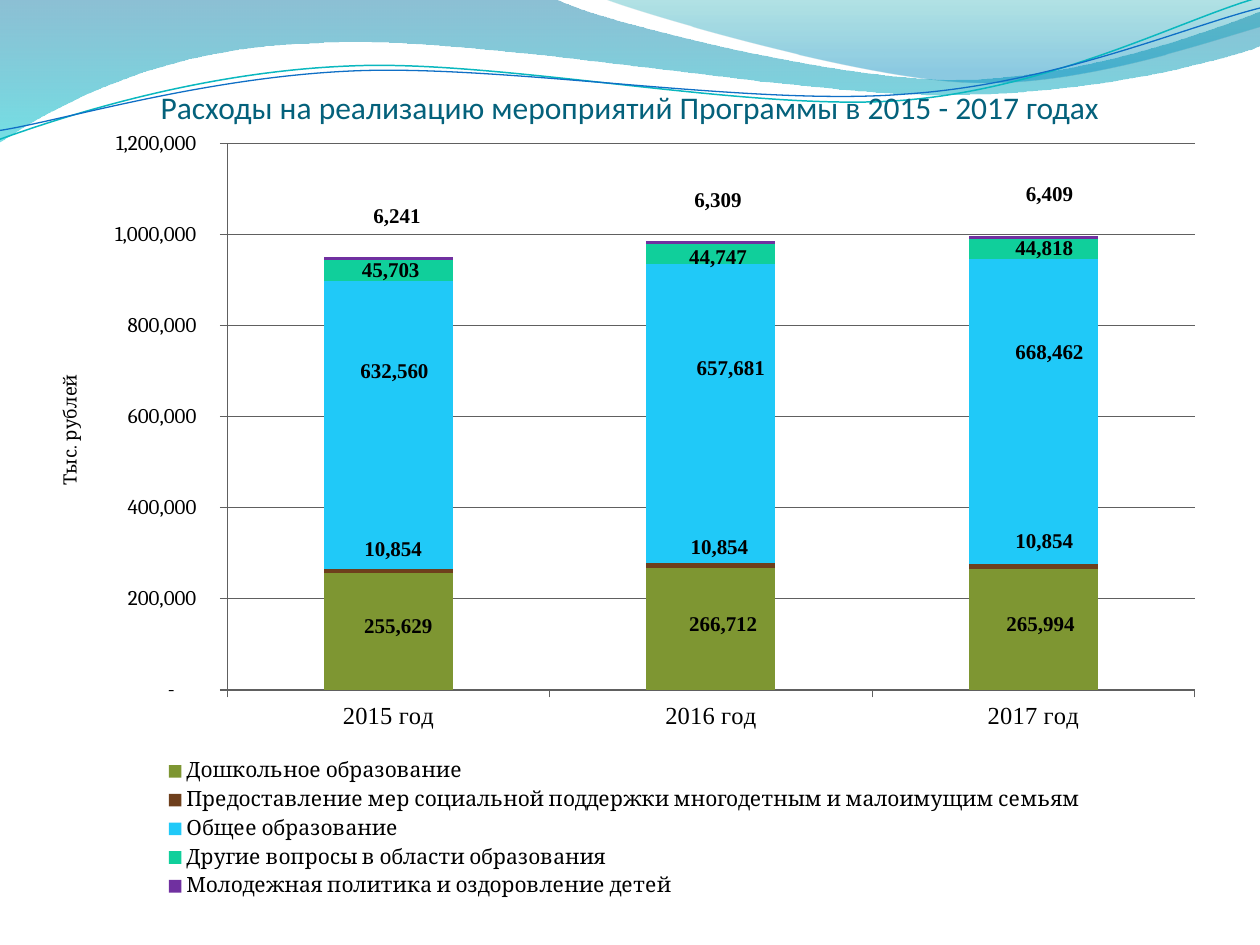
from lxml.etree import SubElement, fromstring
from pptx import Presentation
from pptx.chart.data import CategoryChartData
from pptx.dml.color import RGBColor
from pptx.enum.chart import XL_CHART_TYPE, XL_LABEL_POSITION, XL_LEGEND_POSITION, XL_TICK_MARK
from pptx.enum.text import MSO_ANCHOR, PP_ALIGN
from pptx.oxml.ns import qn
from pptx.util import Inches, Pt

TITLE = "Расходы на реализацию мероприятий Программы в 2015 - 2017 годах"
YEARS = ["2015 год", "2016 год", "2017 год"]
NUMBER = '_-* #,##0_р_._-;\\-* #,##0_р_._-;_-* "-"??_р_._-;_-@_-'
CHART_BOX = (0.25, 0.92, 9.42, 6.25)
GREY = "606060"
# name, colour, values, label shifts in inches
SERIES = [
    ("Дошкольное образование", "7E9632", (255629, 266712, 265994),
     [(0.14, -0.04), (0.16, -0.04), (0.12, -0.04)]),
    ("Предоставление мер социальной поддержки многодетным и малоимущим семьям",
     "6E3F1C", (10854, 10854, 10854),
     [(0.1, -0.17), (0.13, -0.15), (0.15, -0.2)]),
    ("Общее образование", "20C9F8", (632560, 657681, 668462),
     [(0.11, -0.42), (0.22, -0.36), (0.19, -0.47)]),
    ("Другие вопросы в области образования", "10CF9B", (45703, 44747, 44818),
     [(0.08, 0), (0.12, 0.03), (0.15, -0.01)]),
    ("Молодежная политика и оздоровление детей", "7030A0", (6241, 6309, 6409),
     [(0.13, -0.33), (0.12, -0.33), (0.19, -0.34)]),
]
# outline: start point, then lines (2 numbers) and Bezier curves (6 numbers)
# stops: position %, colour, opacity %
BANDS = [
    ([(0, 0), (4.4, -0.01), (4.76, 0.17, 6.64, 0.63, 7.58, 0.63),
      (8.53, 0.63, 9.58, 0.26, 10, 0.09), (10.01, 0.36),
      (9.83, 0.44, 8.7, 0.76, 7.46, 0.75), (6.22, 0.75, 3.82, 0.28, 2.57, 0.34),
      (1.29, 0.36, 0.46, 0.83, -0.01, 1.13), (0, 0)],
     [(0, "0074A1", 45), (100, "00C6CF", 55)]),
    ([(4.79, -0.01), (5.09, 0.11, 6.82, 0.62, 7.69, 0.65),
      (8.56, 0.69, 9.61, 0.32, 10, 0.21), (10, 0), (4.79, -0.01)],
     [(0, "00A1A9", 30), (80, "008BBF", 45)]),
]
WAVE_TURN = 357.3
WAVES = [
    ([(-0.02, 0.87), (0.47, 0.72, 1.58, 0.41, 2.78, 0.42),
      (3.96, 0.42, 5.91, 0.93, 7.12, 0.9), (8.32, 0.87, 9.4, 0.36, 10, 0.22)],
     "0AB8BF", 0.85),
    ([(-0.02, 0.8), (0.46, 0.75, 1.64, 0.45, 2.83, 0.46),
      (4.04, 0.47, 5.96, 0.89, 7.16, 0.85), (8.35, 0.83, 9.42, 0.42, 10.02, 0.3)],
     "0F6FC6", 0.75),
]


def rgb(code):
    return RGBColor.from_string(code)


def style(font, color="000000", **values):
    for key, value in values.items():
        setattr(font, key, value)
    font.color.rgb = rgb(color)


def draw(slide, outline, close):
    """Build the outline from its nodes, then join each curve's three into one."""
    nodes = [(Inches(part[k]), Inches(part[k + 1]))
             for part in outline for k in range(0, len(part), 2)]
    pen = slide.shapes.build_freeform(*nodes[0])
    pen.add_line_segments(nodes[1:], close=close)
    shape = pen.convert_to_shape()
    shape.shadow.inherit = False
    track = shape._element.find(".//" + qn("a:path"))
    lines = iter(track.findall(qn("a:lnTo")))
    for part in outline[1:]:
        line = next(lines)
        if len(part) == 6:
            curve = track.makeelement(qn("a:cubicBezTo"))
            track.replace(line, curve)
            curve.append(line[0])
            for _ in range(2):
                line = next(lines)
                curve.append(line[0])
                track.remove(line)
    return shape


def shade(shape, stops):
    """Give a top-down gradient with opacity."""
    shape.line.fill.background()
    shape.fill.gradient()
    grad = shape._element.spPr.find(qn("a:gradFill"))
    for child in list(grad):
        grad.remove(child)
    items = SubElement(grad, qn("a:gsLst"))
    for place, color, alpha in stops:
        stop = SubElement(items, qn("a:gs"), pos=str(place * 1000))
        tint = SubElement(stop, qn("a:srgbClr"), val=color)
        SubElement(tint, qn("a:alpha"), val=str(alpha * 1000))
    SubElement(grad, qn("a:lin"), ang="5400000", scaled="0")


def layout(inner=False, edge=True, **place):
    """Make a manual chart layout from fractions of the chart."""
    node = fromstring('<c:layout xmlns:c="%s"/>'
                      % "http://schemas.openxmlformats.org/drawingml/2006/chart")
    manual = SubElement(node, qn("c:manualLayout"))
    if inner:
        SubElement(manual, qn("c:layoutTarget"), val="inner")
    if edge:
        for mode in ("xMode", "yMode"):
            SubElement(manual, qn("c:" + mode), val="edge")
    for key, value in place.items():
        SubElement(manual, qn("c:" + key), val=f"{value:.4f}")
    return node


def put(parent, node, after=None):
    """Replace the layout, placing it after a given child or first."""
    for old in parent.findall(qn("c:layout")):
        parent.remove(old)
    prior = parent.find(qn(after)) if after else None
    parent.insert(0 if prior is None else parent.index(prior) + 1, node)


def hide_leaders(labels):
    for old in labels.findall(qn("c:showLeaderLines")):
        old.set("val", "0")
    extra = SubElement(SubElement(labels, qn("c:extLst")), qn("c:ext"),
                       uri="{CE6537A1-D6FC-4f65-9D91-7224C49458BB}")
    space = "http://schemas.microsoft.com/office/drawing/2012/chart"
    SubElement(extra, "{%s}showLeaderLines" % space, nsmap={"c15": space}, val="0")


def label(series, shifts):
    look = dict(name="Times New Roman", size=Pt(12), bold=True)
    labels = series.data_labels
    labels.show_value = True
    labels.number_format, labels.number_format_is_linked = NUMBER, False
    style(labels.font, **look)
    for i, (dx, dy) in enumerate(shifts):
        point = series.points[i].data_label
        style(point.font, **look)
        point.position = XL_LABEL_POSITION.CENTER
        node = series._element.findall(".//" + qn("c:dLbl"))[i]
        put(node, layout(edge=False, x=dx / CHART_BOX[2], y=dy / CHART_BOX[3]), "c:idx")
        form = node.makeelement(qn("c:numFmt"), formatCode=NUMBER, sourceLinked="0")
        node.insert(2, form)
    hide_leaders(series._element.find(qn("c:dLbls")))


def add_costs(slide):
    data = CategoryChartData(number_format=NUMBER)
    data.categories = YEARS
    for name, _, values, _ in SERIES:
        data.add_series(name, values)
    chart = slide.shapes.add_chart(
        XL_CHART_TYPE.COLUMN_STACKED, *map(Inches, CHART_BOX), data).chart
    chart.has_title = False
    style(chart.font, name="Cambria", size=Pt(18))
    plot = chart.plots[0]
    plot.gap_width, plot.overlap, plot.vary_by_categories = 150, 100, False
    for series, (_, color, _, shifts) in zip(plot.series, SERIES):
        series.format.fill.solid()
        series.format.fill.fore_color.rgb = rgb(color)
        label(series, shifts)

    cat, val = chart.category_axis, chart.value_axis
    style(cat.tick_labels.font, name="Times New Roman", size=Pt(14))
    style(val.tick_labels.font, name="Cambria", size=Pt(12))
    val.tick_labels.number_format = NUMBER
    val.tick_labels.number_format_is_linked = False
    val.minimum_scale, val.maximum_scale, val.major_unit = 0, 1200000, 200000
    val.has_major_gridlines = True
    cat.major_tick_mark, val.major_tick_mark = XL_TICK_MARK.OUTSIDE, XL_TICK_MARK.CROSS
    for part in (cat, val, val.major_gridlines):
        part.format.line.color.rgb = rgb(GREY)
        part.format.line.width = Pt(0.75)
    frame = val.axis_title.text_frame
    frame.text = "Тыс. рублей"
    style(frame.paragraphs[0].runs[0].font, name="Cambria", size=Pt(10.5), bold=False)
    put(val.axis_title._element, layout(x=0.019, y=0.324), "c:tx")

    chart.has_legend = True
    legend = chart.legend
    legend.position, legend.include_in_layout = XL_LEGEND_POSITION.BOTTOM, False
    style(legend.font, name="Cambria", size=Pt(12))
    put(legend._element, layout(x=0.1, y=0.811, w=0.8, h=0.19), "c:legendPos")
    area = chart._chartSpace.find(".//" + qn("c:plotArea"))
    put(area, layout(inner=True, x=0.165, y=0.035, w=0.815, h=0.694))


def main():
    deck = Presentation()
    deck.slide_width, deck.slide_height = Inches(10), Inches(7.5)
    slide = deck.slides.add_slide(deck.slide_layouts[5])
    for outline, stops in BANDS:
        shade(draw(slide, outline, True), stops)
    for outline, color, width in WAVES:
        wave = draw(slide, outline, False)
        wave.rotation = WAVE_TURN
        wave.fill.background()
        wave.line.color.rgb, wave.line.width = rgb(color), Pt(width)

    title = slide.shapes.title
    slide.shapes._spTree.append(title._element)
    title.left, title.top, title.width, title.height = map(Inches, (0.5, 0.5, 9, 0.5))
    frame = title.text_frame
    frame.text = TITLE
    frame.vertical_anchor = MSO_ANCHOR.BOTTOM
    frame.margin_left = frame.margin_right = frame.margin_bottom = 0
    frame.paragraphs[0].alignment = PP_ALIGN.CENTER
    style(frame.paragraphs[0].runs[0].font, "04617B", name="Calibri", size=Pt(18))
    add_costs(slide)
    deck.save("out.pptx")


if __name__ == "__main__":
    main()
